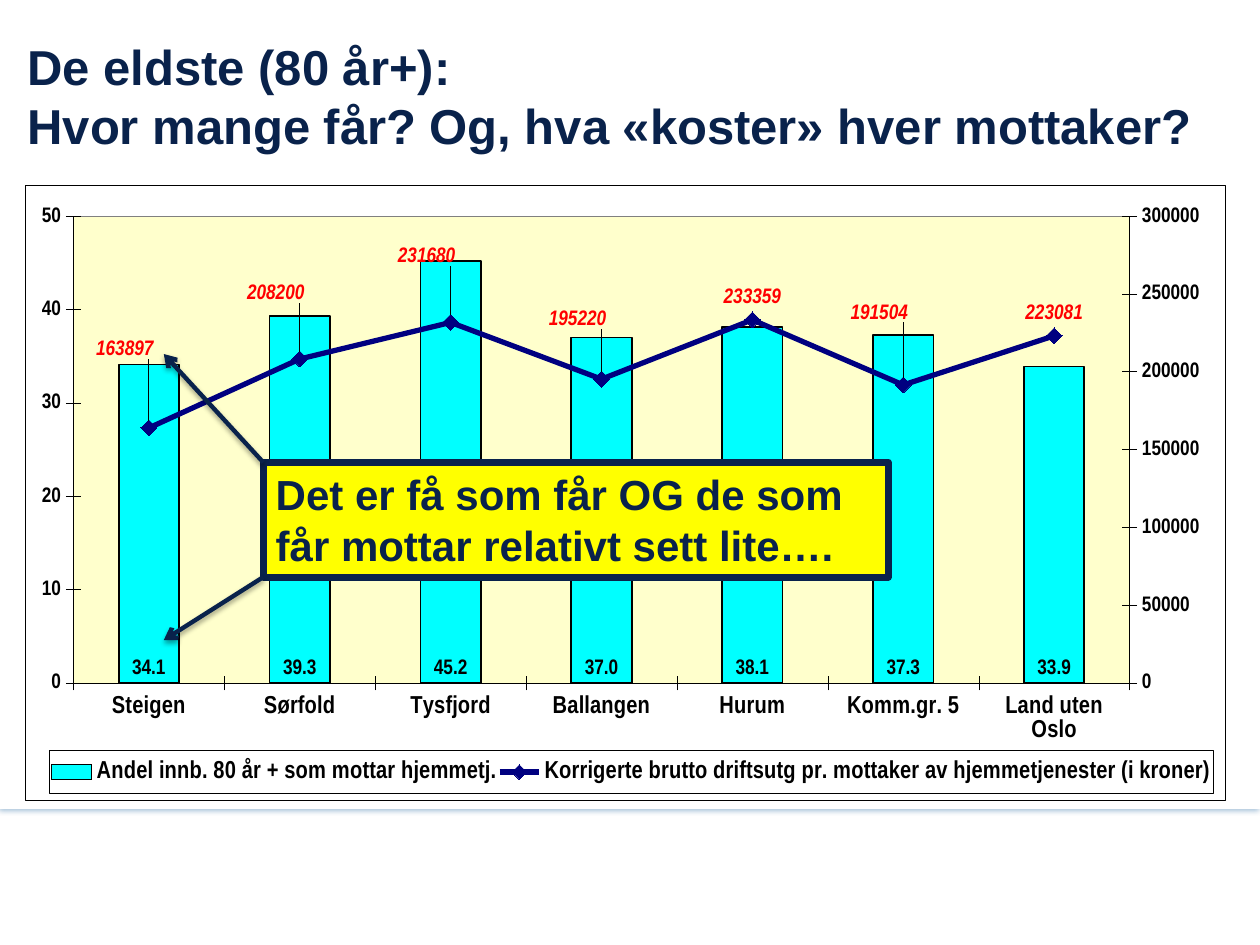
from copy import deepcopy
from lxml import etree
from pptx import Presentation
from pptx.chart.data import CategoryChartData
from pptx.dml.color import RGBColor
from pptx.enum.chart import XL_CHART_TYPE, XL_LABEL_POSITION, XL_LEGEND_POSITION, XL_MARKER_STYLE, XL_TICK_MARK
from pptx.enum.shapes import MSO_CONNECTOR, MSO_SHAPE
from pptx.enum.text import MSO_ANCHOR, PP_ALIGN
from pptx.oxml import parse_xml
from pptx.oxml.ns import nsdecls, qn
from pptx.util import Inches, Pt

COLUMN = XL_CHART_TYPE.COLUMN_CLUSTERED
CROSS = XL_TICK_MARK.CROSS
ABOVE = XL_LABEL_POSITION.ABOVE
INSIDE_BASE = XL_LABEL_POSITION.INSIDE_BASE
DIAMOND = XL_MARKER_STYLE.DIAMOND
RIGHT = XL_LEGEND_POSITION.RIGHT
NAVY, BLACK, WHITE = "09224B", "000000", "FFFFFF"
BAR_COLOR, LINE_COLOR, LABEL_COLOR = "00FFFF", "000080", "FF0000"
CHART_FONT = "Arial Narrow"

TITLE = "De eldste (80 år+):\vHvor mange får? Og, hva «koster» hver mottaker?"
CALLOUT = "Det er få som får OG de som får mottar relativt sett lite…."
CATEGORIES = ["Steigen", "Sørfold", "Tysfjord", "Ballangen", "Hurum", "Komm.gr. 5", "Land uten Oslo"]
SHARE = ("Andel innb. 80 år + som mottar hjemmetj.", [34.1, 39.3, 45.2, 37, 38.1, 37.3, 33.9])
COST = ("Korrigerte brutto driftsutg pr. mottaker av hjemmetjenester (i kroner)",
        [163897, 208200, 231680, 195220, 233359, 191504, 223081])
LABEL_SHIFTS = {0: (-0.02, -0.09), 1: (-0.02, -0.07), 2: (-0.02, -0.07), 3: (-0.02, -0.06), 5: (-0.02, -0.08)}
EDGES = [("xMode", "edge"), ("yMode", "edge")]
PLOT_LAYOUT = [("layoutTarget", "inner"), *EDGES, ("x", 0.04), ("y", 0.05), ("w", 0.88), ("h", 0.76)]
LEGEND_LAYOUT = [*EDGES, ("x", 0.02), ("y", 0.92), ("w", 0.97), ("h", 0.07)]
CALLOUT_BOX = (2.09, 3.67, 4.96, 0.91)
ARROWS = [(3.67, 2.81), (4.58, 5.08)]
ARROW_TIP_X = 1.3


def rgb(value):
    return RGBColor.from_string(value)


def set_font(font, size, color=BLACK, name=CHART_FONT, italic=None):
    font.size, font.bold, font.name, font.italic = Pt(size), True, name, italic
    font.color.rgb = rgb(color)


def set_fill(fill, color):
    fill.solid()
    fill.fore_color.rgb = rgb(color)


def set_line(line, color, width):
    line.color.rgb = rgb(color)
    line.width = Pt(width)


def remove_all(parent, tag):
    for child in parent.findall(qn(tag)):
        parent.remove(child)


def add_shadow(shape, color, alpha, blur, dist):
    remove_all(shape._element.spPr, "a:effectLst")
    shape._element.spPr.append(parse_xml(
        f'<a:effectLst {nsdecls("a")}><a:outerShdw blurRad="{Pt(blur)}" dist="{Pt(dist)}" dir="5400000" '
        f'rotWithShape="0"><a:srgbClr val="{color}"><a:alpha val="{alpha * 1000}"/></a:srgbClr>'
        '</a:outerShdw></a:effectLst>'))


def area_format(fill, line):
    return parse_xml(
        f'<c:spPr {nsdecls("c", "a")}><a:solidFill><a:srgbClr val="{fill}"/></a:solidFill>'
        f'<a:ln w="{Pt(0.25)}"><a:solidFill><a:srgbClr val="{line}"/></a:solidFill></a:ln></c:spPr>')


def set_layout(parent, index, settings):
    remove_all(parent, "c:layout")
    inner = "".join(f'<c:{name} val="{value}"/>' for name, value in settings)
    parent.insert(index, parse_xml(
        f'<c:layout {nsdecls("c")}><c:manualLayout>{inner}</c:manualLayout></c:layout>'))


def set_val(parent, tag, value):
    parent.find(qn(tag)).set("val", str(value))


def move_cost_to_line(chart):
    area = chart._chartSpace.chart.plotArea
    bar = area.find(qn("c:barChart"))
    ser = bar.findall(qn("c:ser"))[1]
    remove_all(ser, "c:invertIfNegative")
    line = parse_xml(
        f'<c:lineChart {nsdecls("c")}><c:grouping val="standard"/><c:varyColors val="0"/>'
        '<c:marker val="1"/><c:axId val="5001"/><c:axId val="5002"/></c:lineChart>')
    line.insert(2, ser)
    bar.addnext(line)
    cat, val = area.find(qn("c:catAx")), area.find(qn("c:valAx"))
    cat2, val2 = deepcopy(cat), deepcopy(val)
    for axis, own, other in ((cat2, 5001, 5002), (val2, 5002, 5001)):
        set_val(axis, "c:axId", own)
        set_val(axis, "c:crossAx", other)
    set_val(cat2, "c:delete", 1)
    set_val(val2, "c:axPos", "r")
    set_val(val2, "c:crosses", "max")
    set_val(val2, "c:majorUnit", 50000)
    set_val(val2.find(qn("c:scaling")), "c:max", 300000)
    val.addnext(val2)
    val2.addnext(cat2)


def format_axes(chart):
    for axis, size in ((chart.category_axis, 14), (chart.value_axis, 12)):
        axis.visible = True
        axis.major_tick_mark = CROSS
        axis.has_major_gridlines = False
        set_font(axis.tick_labels.font, size)
        set_line(axis.format.line, BLACK, 0.25)
    left = chart.value_axis
    left.minimum_scale, left.maximum_scale, left.major_unit = 0, 50, 10
    left.tick_labels.number_format = "0"
    left.tick_labels.number_format_is_linked = False


def format_share(plot):
    plot.gap_width = 150
    plot.vary_by_categories = False
    ser = plot.series[0]
    set_fill(ser.format.fill, BAR_COLOR)
    set_line(ser.format.line, BLACK, 1)
    labels = ser.data_labels
    labels.show_value = True
    labels.position = INSIDE_BASE
    labels.number_format = "0.0"
    labels.number_format_is_linked = False
    set_font(labels.font, 12)


def format_cost(ser):
    ser.smooth = False
    set_line(ser.format.line, LINE_COLOR, 3)
    ser.marker.style, ser.marker.size = DIAMOND, 9
    set_fill(ser.marker.format.fill, LINE_COLOR)
    set_line(ser.marker.format.line, LINE_COLOR, 0.75)
    labels = ser.data_labels
    labels.show_value = True
    labels.position = ABOVE
    set_font(labels.font, 12, LABEL_COLOR, italic=True)
    for i, shift in LABEL_SHIFTS.items():
        label = ser.points[i].data_label
        set_font(label.font, 12, LABEL_COLOR, italic=True)
        label.position = ABOVE
    for item in labels._element.findall(qn("c:dLbl")):
        shift = LABEL_SHIFTS[int(item.find(qn("c:idx")).get("val"))]
        set_layout(item, 1, zip("xy", shift))


def format_chart(chart):
    chart.font.size, chart.font.name, chart.font.bold = Pt(10), CHART_FONT, True
    chart.has_title = False
    format_axes(chart)
    move_cost_to_line(chart)
    bars, lines = chart.plots
    format_share(bars)
    format_cost(lines.series[0])

    chart.has_legend = True
    legend = chart.legend
    legend.position = RIGHT
    legend.include_in_layout = False
    set_font(legend.font, 14)
    set_layout(legend._element, 1, LEGEND_LAYOUT)
    legend._element.find(qn("c:txPr")).addprevious(area_format(WHITE, BLACK))

    space = chart._chartSpace
    set_layout(space.chart.plotArea, 0, PLOT_LAYOUT)
    space.chart.plotArea.append(area_format("FFFFCC", "808080"))
    space.chart.addnext(area_format(WHITE, BLACK))


def write(shape, text, size, anchor):
    tf = shape.text_frame
    tf.word_wrap = True
    tf.vertical_anchor = anchor
    p = tf.paragraphs[0]
    p.text = text
    p.alignment = PP_ALIGN.LEFT
    for r in p.runs:
        set_font(r.font, size, NAVY, "Arial")


def add_box(s, box, fill):
    sp = s.shapes.add_shape(MSO_SHAPE.RECTANGLE, *map(Inches, box))
    sp.shadow.inherit = False
    set_fill(sp.fill, fill)
    return sp


prs = Presentation()
prs.slide_width, prs.slide_height = Inches(10), Inches(7.5)
s = prs.slides.add_slide(prs.slide_layouts[6])

panel = add_box(s, (0, 0, 10, 6.42), WHITE)
panel.line.fill.background()
add_shadow(panel, "005193", 35, 3.1, 1.8)

title = s.shapes.add_textbox(*map(Inches, (0.12, 0.13, 9.76, 1.25)))
write(title, TITLE, 28, MSO_ANCHOR.MIDDLE)

data = CategoryChartData()
data.categories = CATEGORIES
for name, values in (SHARE, COST):
    data.add_series(name, values)
format_chart(s.shapes.add_chart(COLUMN, *map(Inches, (0.2, 1.47, 9.53, 4.88)), data).chart)

callout = add_box(s, CALLOUT_BOX, "FFFF00")
set_line(callout.line, NAVY, 4)
write(callout, CALLOUT, 24, MSO_ANCHOR.TOP)

for start_y, tip_y in ARROWS:
    arrow = s.shapes.add_connector(
        MSO_CONNECTOR.STRAIGHT, *map(Inches, (CALLOUT_BOX[0], start_y, ARROW_TIP_X, tip_y)))
    set_line(arrow.line, NAVY, 2.5)
    etree.SubElement(arrow.line._get_or_add_ln(), qn("a:tailEnd"), type="arrow")
    add_shadow(arrow, BLACK, 38, 3.1, 1.6)

prs.save("out.pptx")
